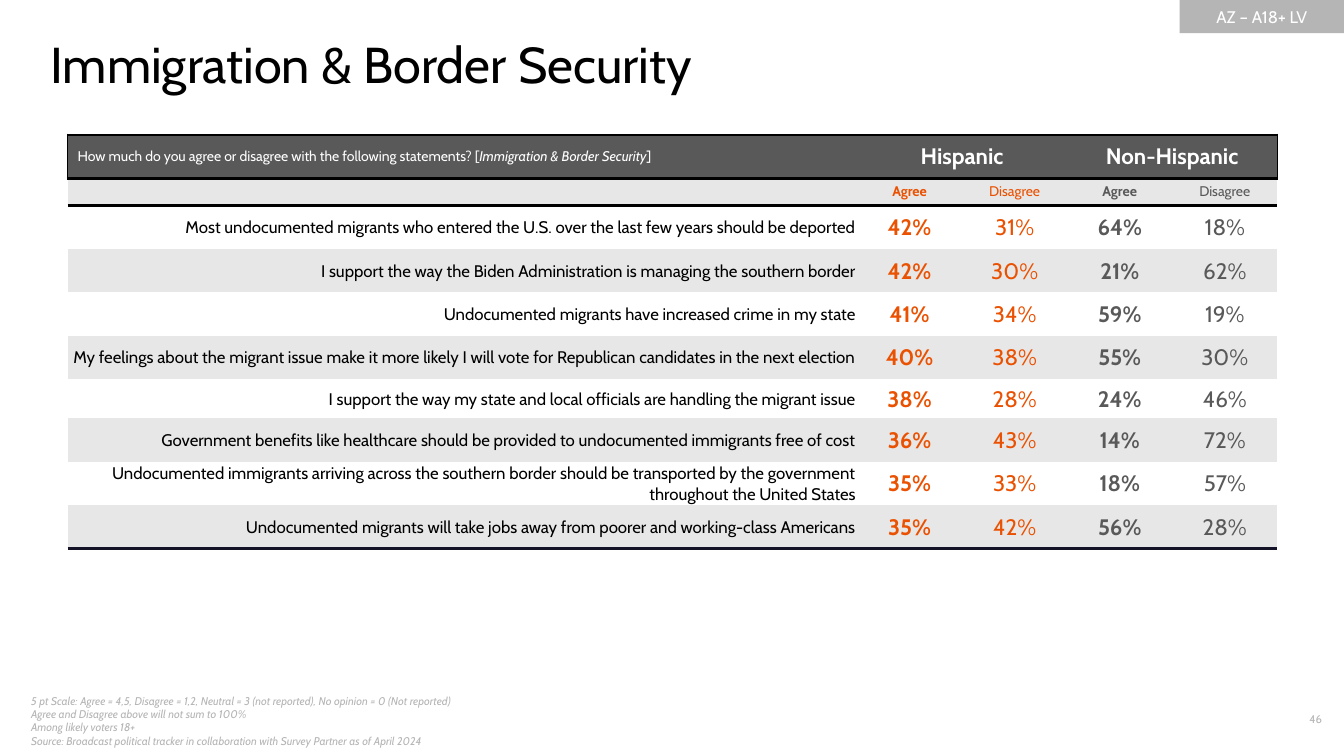
from dataclasses import dataclass

from lxml.etree import SubElement
from pptx import Presentation
from pptx.dml.color import RGBColor as Color
from pptx.enum.shapes import MSO_SHAPE as Shape
from pptx.enum.text import MSO_ANCHOR as Anchor, MSO_AUTO_SIZE as AutoSize, PP_ALIGN as Align
from pptx.oxml.ns import qn
from pptx.util import Inches, Pt

TITLE = "Immigration & Border Security"
AUDIENCE = "AZ – A18+ LV"
PAGE_NUMBER = "46"
QUESTION = [
    ("How much do you agree or disagree with the following statements? [", False),
    ("Immigration & Border Security", True),
    ("]", False),
]
GROUPS = ["Hispanic", "Non-Hispanic"]
ANSWERS = ["Agree", "Disagree"]
STATEMENTS = [
    ("Most undocumented migrants who entered the U.S. over the last few years should be deported", 42, 31, 64, 18),
    ("I support the way the Biden Administration is managing the southern border", 42, 30, 21, 62),
    ("Undocumented migrants have increased crime in my state", 41, 34, 59, 19),
    ("My feelings about the migrant issue make it more likely I will vote for Republican candidates "
     "in the next election", 40, 38, 55, 30),
    ("I support the way my state and local officials are handling the migrant issue", 38, 28, 24, 46),
    ("Government benefits like healthcare should be provided to undocumented immigrants free of cost",
     36, 43, 14, 72),
    ("Undocumented immigrants arriving across the southern border should be transported by the government "
     "throughout the United States", 35, 33, 18, 57),
    ("Undocumented migrants will take jobs away from poorer and working-class Americans", 35, 42, 56, 28),
]
FOOTNOTES = [
    "5 pt Scale: Agree = 4,5, Disagree = 1,2, Neutral = 3 (not reported), No opinion = 0 (Not reported)",
    "Agree and Disagree above will not sum to 100%",
    "Among likely voters 18+\vSource: Broadcast political tracker in collaboration with Survey Partner "
    "as of April 2024",
]


@dataclass(frozen=True)
class Theme:
    font: str = "Cabin"
    black: str = "000000"
    white: str = "FFFFFF"
    dark: str = "595959"
    band: str = "E7E7E7"
    muted: str = "B5B5B5"
    accent: str = "EA5101"
    closing: str = "141327"
    title: int = 36
    figure: int = 16
    statement: int = 12
    label: int = 10
    note: int = 8
    thick: float = 2.25
    thin: float = 1
    no_grid: str = "{2D5ABB26-0587-4C30-8999-92F81FD0307C}"


theme = Theme()
TABLE_BOX = (0.67, 1.34, 12, 4.1)
STATEMENT_WIDTH = 7.83
ROW_HEIGHT, LABEL_HEIGHT, SHORT_HEIGHT = 0.43, 0.27, 0.39
SHORT_ROW = 6


def style(span, size, color, **formats):
    span.font.color.rgb = Color.from_string(color)
    values = {"name": theme.font, "size": Pt(size), **formats}
    for key, value in values.items():
        setattr(span.font, key, value)


def write(frame, lines, size, color, align=Align.LEFT, **formats):
    for index, line in enumerate(lines):
        para = frame.add_paragraph() if index else frame.paragraphs[0]
        para.text = line
        para.alignment = align
        for span in para.runs:
            style(span, size, color, **formats)


def add_text(page, box, lines, size, color, anchor=Anchor.TOP, **formats):
    frame = page.shapes.add_textbox(*map(Inches, box)).text_frame
    frame.word_wrap = True
    frame.vertical_anchor = anchor
    write(frame, lines, size, color, **formats)


def decorate(cell, fill, borders):
    cell.vertical_anchor = Anchor.MIDDLE
    properties = cell._tc.get_or_add_tcPr()
    for side in "LRTB":
        if side in borders:
            color, width = borders[side]
            line = SubElement(properties, qn(f"a:ln{side}"), w=str(Pt(width)))
            solid = SubElement(line, qn("a:solidFill"))
            SubElement(solid, qn("a:srgbClr"), val=color)
    cell.fill.solid()
    cell.fill.fore_color.rgb = Color.from_string(fill)


def add_results(page):
    rows, columns = len(STATEMENTS) + 2, 1 + len(GROUPS) * len(ANSWERS)
    table = page.shapes.add_table(rows, columns, *map(Inches, TABLE_BOX)).table
    table._tbl.tblPr.find(qn("a:tableStyleId")).text = theme.no_grid
    answer_width = (TABLE_BOX[2] - STATEMENT_WIDTH) / (columns - 1)
    for index, column in enumerate(table.columns):
        column.width = Inches(answer_width if index else STATEMENT_WIDTH)
    for index, row in enumerate(table.rows):
        row.height = Inches({1: LABEL_HEIGHT, SHORT_ROW: SHORT_HEIGHT}.get(index, ROW_HEIGHT))

    heavy, light = (theme.black, theme.thick), (theme.black, theme.thin)
    for row in range(rows):
        for column in range(columns):
            borders = {}
            if row == 0:
                borders = {"T": heavy, "B": heavy}
                if column == 0:
                    borders["L"] = light
                elif column >= columns - len(ANSWERS):
                    borders["R"] = light
            elif row == 1:
                borders = {"T": heavy}
            elif row == rows - 1:
                borders = {"B": (theme.closing, theme.thick)}
            fill = theme.dark if row == 0 else theme.band if row % 2 else theme.white
            decorate(table.cell(row, column), fill, borders)

    question = table.cell(0, 0).text_frame.paragraphs[0]
    for text, italic in QUESTION:
        span = question.add_run()
        span.text = text
        style(span, theme.label, theme.white, italic=italic, bold=False)
    blank = table.cell(1, 0).text_frame.paragraphs[0]
    SubElement(blank._p, qn("a:endParaRPr"), sz=str(theme.label * 100))

    for index, group in enumerate(GROUPS):
        first = 1 + index * len(ANSWERS)
        head = table.cell(0, first)
        head.merge(table.cell(0, first + len(ANSWERS) - 1))
        write(head.text_frame, [group], theme.figure, theme.white, Align.CENTER, bold=True)

    for row in range(1, rows):
        if row == 1:
            texts, size = ANSWERS * len(GROUPS), theme.label
        else:
            statement, *shares = STATEMENTS[row - 2]
            texts, size = [f"{share}%" for share in shares], theme.figure
            write(table.cell(row, 0).text_frame, [statement], theme.statement, theme.black,
                  Align.RIGHT, bold=False)
            for column in range(columns):
                cell = table.cell(row, column)
                cell.margin_left = cell.margin_right = cell.margin_top = Inches(0.01)
                cell.margin_bottom = 0
        for index, text in enumerate(texts):
            color = theme.accent if index < len(ANSWERS) else theme.dark
            write(table.cell(row, index + 1).text_frame, [text], size, color,
                  Align.CENTER, bold=index % len(ANSWERS) == 0)


def main():
    deck = Presentation()
    deck.slide_width, deck.slide_height = Inches(13.33), Inches(7.5)
    page = deck.slides.add_slide(deck.slide_layouts[5])

    add_text(page, (0.21, 6.95, 5.11, 0.4), FOOTNOTES, theme.note, theme.muted, Anchor.MIDDLE, italic=True)
    add_text(page, (12.33, 7.02, 0.88, 0.27), [PAGE_NUMBER], theme.note, theme.muted, align=Align.RIGHT)

    tag = page.shapes.add_shape(Shape.RECTANGLE, *map(Inches, (11.7, 0, 1.63, 0.33)))
    tag.shadow.inherit = False
    tag.fill.solid()
    tag.fill.fore_color.rgb = Color.from_string(theme.muted)
    tag.line.fill.background()
    tag.text_frame.vertical_anchor = Anchor.MIDDLE
    write(tag.text_frame, [AUDIENCE], theme.statement, theme.white, Align.CENTER)

    title = page.shapes.title
    title.left, title.top, title.width, title.height = map(Inches, (0.5, 0.33, 12, 0.61))
    formats = {"margin_left": 0, "margin_right": 0, "margin_top": 0, "margin_bottom": 0,
               "vertical_anchor": Anchor.TOP, "auto_size": AutoSize.NONE, "word_wrap": True}
    for key, value in formats.items():
        setattr(title.text_frame, key, value)
    write(title.text_frame, [TITLE], theme.title, theme.black)

    add_results(page)
    deck.save("out.pptx")


if __name__ == "__main__":
    main()
